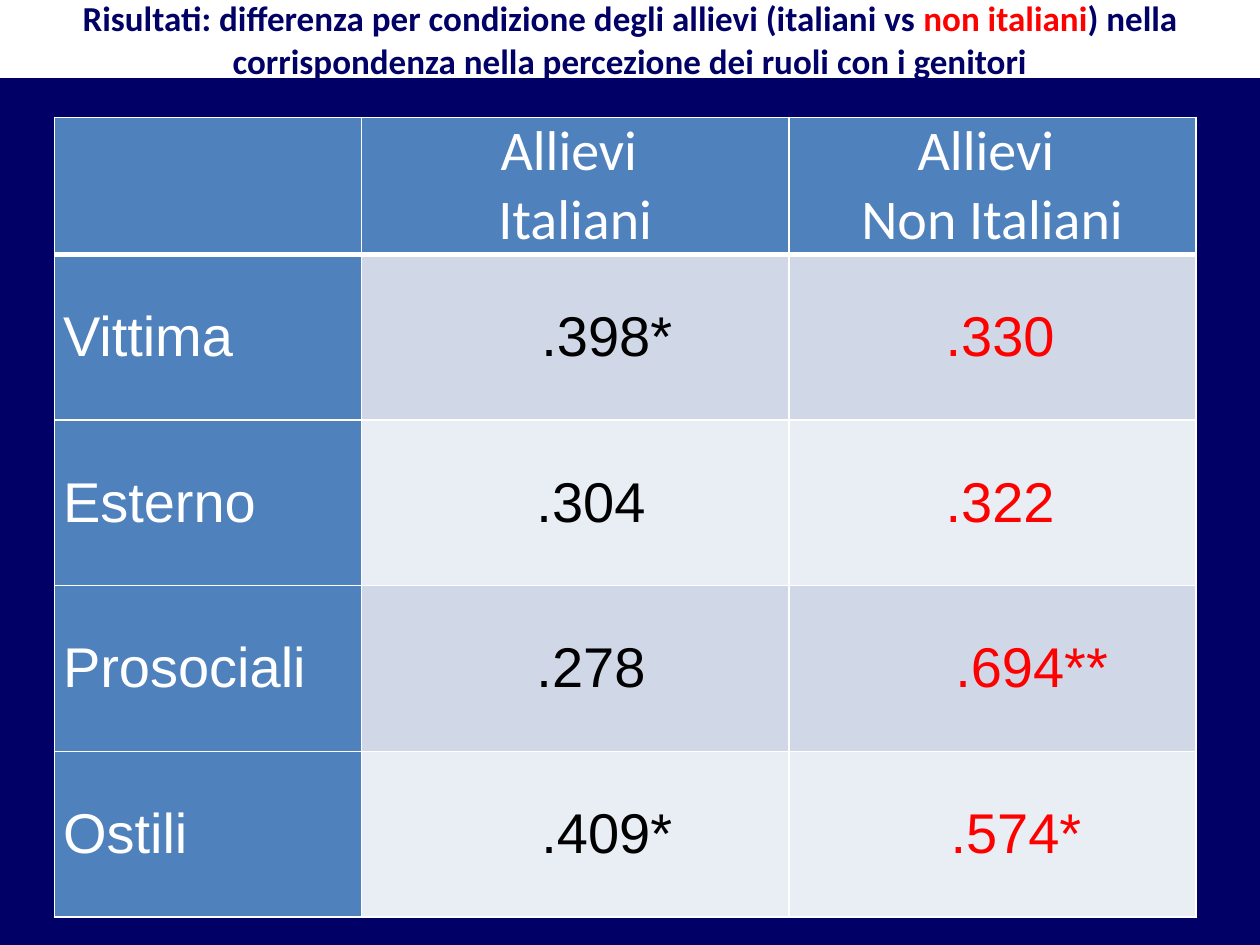
from lxml import etree
from pptx import Presentation
from pptx.dml.color import RGBColor
from pptx.enum.text import MSO_ANCHOR, MSO_AUTO_SIZE, PP_ALIGN
from pptx.oxml.ns import qn
from pptx.util import Pt

CENTER, LEFT = PP_ALIGN.CENTER, PP_ALIGN.LEFT
MIDDLE = MSO_ANCHOR.MIDDLE
NO_AUTOFIT = MSO_AUTO_SIZE.NONE

COLORS = {
    "navy": "000066",
    "white": "FFFFFF",
    "black": "000000",
    "red": "FF0000",
    "header": "4F81BD",
    "band_dark": "D0D8E8",
    "band_light": "E9EDF4",
}
HEADERS = [[], ["Allievi ", "Italiani"], ["Allievi ", "Non Italiani"]]
# Role, then (value, left indent in points) for each group of pupils
ROLES = [
    ("Vittima", (".398*", 36), (".330", 9)),
    ("Esterno", (".304", 18), (".322", 9)),
    ("Prosociali", (".278", 18), (".694**", 45)),
    ("Ostili", (".409*", 36), (".574*", 27)),
]
COL_WIDTHS = [175.7, 244.1, 232.5]
HEADER_HEIGHT, ROW_HEIGHT = 77, 94.7


class SlideBuilder:
    title_font, table_font = "Calibri", "Arial"
    title_size, table_size = 20, 32

    def __init__(self, prs):
        self.s = prs.slides.add_slide(prs.slide_layouts[5])
        self.fill(self.s.background, "navy")

    def fill(self, target, color):
        target.fill.solid()
        target.fill.fore_color.rgb = RGBColor.from_string(COLORS[color])

    def run(self, p, text, font, size, color, bold=False):
        r = p.add_run()
        r.text = text
        r.font.name, r.font.size, r.font.bold = font, Pt(size), bold
        r.font.color.rgb = RGBColor.from_string(COLORS[color])

    def title(self, box, runs):
        sp = self.s.shapes.title
        sp.left, sp.top, sp.width, sp.height = (Pt(v) for v in box)
        self.fill(sp, "white")
        tf = sp.text_frame
        tf.word_wrap, tf.auto_size, tf.vertical_anchor = True, NO_AUTOFIT, MIDDLE
        p = tf.paragraphs[0]
        p.alignment = CENTER
        for text, color in runs:
            self.run(p, text, self.title_font, self.title_size, color, True)

    def table(self, left, top, widths, heights):
        frame = self.s.shapes.add_table(
            len(heights), len(widths), Pt(left), Pt(top),
            Pt(sum(widths)), Pt(sum(heights)))
        for col, width in zip(frame.table.columns, widths):
            col.width = Pt(width)
        for row, height in zip(frame.table.rows, heights):
            row.height = Pt(height)
        return frame.table

    def cell(self, cell, lines, fill, color, font=None, align=CENTER,
             indent=0, top=1, bottom=1):
        cell.margin_left = cell.margin_right = Pt(5)
        cell.margin_top = cell.margin_bottom = 0
        cell.vertical_anchor = MIDDLE
        self.fill(cell, fill)
        self.borders(cell, {"lnL": 1, "lnR": 1, "lnT": top, "lnB": bottom})
        tf = cell.text_frame
        for i, text in enumerate(lines):
            p = tf.add_paragraph() if i else tf.paragraphs[0]
            p.alignment = align
            if indent:
                p_pr = p._p.get_or_add_pPr()
                p_pr.set("marL", str(Pt(indent)))
                p_pr.set("indent", "0")
            self.run(p, text, font or self.table_font, self.table_size, color)

    def borders(self, cell, widths):
        tc_pr = cell._tc.get_or_add_tcPr()
        for i, (side, width) in enumerate(widths.items()):
            ln = etree.Element(qn(f"a:{side}"), w=str(Pt(width)))
            solid = etree.SubElement(ln, qn("a:solidFill"))
            etree.SubElement(solid, qn("a:srgbClr"), val=COLORS["white"])
            tc_pr.insert(i, ln)


def main():
    prs = Presentation()
    prs.slide_width, prs.slide_height = Pt(720), Pt(540)
    slide = SlideBuilder(prs)

    # Title band
    slide.title((0, 0, 720, 44.6), [
        ("Risultati: differenza per condizione degli allievi (italiani vs ", "navy"),
        ("non italiani", "red"),
        (") nella corrispondenza nella percezione dei ruoli con i genitori", "navy"),
    ])

    # Table header
    heights = [HEADER_HEIGHT] + [ROW_HEIGHT] * len(ROLES)
    table = slide.table(31, 67, COL_WIDTHS, heights)
    for col, lines in enumerate(HEADERS):
        slide.cell(table.cell(0, col), lines, "header", "white",
                   font=slide.title_font, bottom=3)

    # One banded row per role
    for row, (role, *values) in enumerate(ROLES, 1):
        top = 3 if row == 1 else 1
        band = "band_dark" if row % 2 else "band_light"
        slide.cell(table.cell(row, 0), [role], "header", "white",
                   align=LEFT, top=top)
        for col, ((value, indent), color) in enumerate(zip(values, ("black", "red")), 1):
            slide.cell(table.cell(row, col), [value], band, color,
                       indent=indent, top=top)

    prs.save("out.pptx")


if __name__ == "__main__":
    main()
